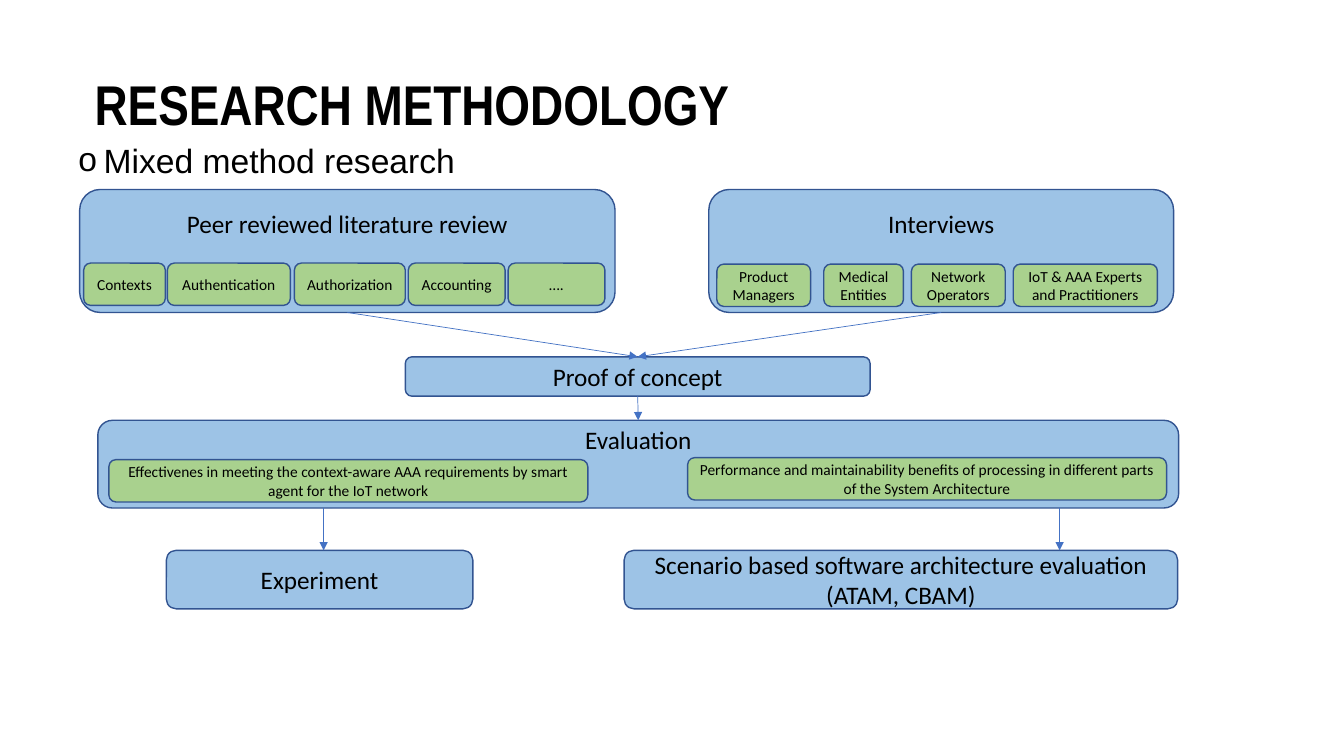
from lxml import etree
from pptx import Presentation, util as u
from pptx.dml.color import RGBColor
from pptx.enum import shapes, text
from pptx.oxml.ns import qn

PX = 9144  # 100 px to the inch
COL = {"ink": "000000", "blue": "9DC3E6", "green": "A9D18E",
       "edge": "325491", "arrow": "4472C4"}

# Left edge, width and label of the small boxes
TOPICS = [(83, 81, "Contexts"), (166, 122, "Authentication"),
          (292, 110, "Authorization"), (405, 96, "Accounting"),
          (504, 96, "….")]
PEOPLE = [(711, 93, "Product Managers"), (817, 79, "Medical Entities"),
          (904, 93, "Network Operators"),
          (1005, 143, "IoT & AAA Experts and Practitioners")]


def rgb(name):
    return RGBColor.from_string(COL[name])


def px(*nums):
    return [u.Emu(n * PX) for n in nums]


def add_run(para, words, size, font, bold=False):
    run = para.add_run()
    run.text = words
    run.font.size = u.Pt(size)
    run.font.name = font
    run.font.bold = bold
    run.font.color.rgb = rgb("ink")


def add_text(slide, area, words, size, font, bold=False, bullet=None):
    frame = slide.shapes.add_textbox(*px(*area)).text_frame
    frame.word_wrap = True
    para = frame.paragraphs[0]
    para.line_spacing = 0.9
    if bullet:
        props = para._p.get_or_add_pPr()
        props.set("marL", str(25 * PX))
        props.set("indent", str(-25 * PX))
        etree.SubElement(props, qn("a:buFont")).set("typeface", font)
        etree.SubElement(props, qn("a:buChar")).set("char", bullet)
    add_run(para, words, size, font, bold)


def add_box(slide, area, lines, fill="blue", size=18, top=None):
    """Rounded box; top is the inset of a heading, None centres the text."""
    box = slide.shapes.add_shape(
        shapes.MSO_SHAPE.ROUNDED_RECTANGLE, *px(*area))
    box.shadow.inherit = False
    box.fill.solid()
    box.fill.fore_color.rgb = rgb(fill)
    box.line.color.rgb = rgb("edge")
    box.line.width = u.Pt(1)
    frame = box.text_frame
    frame.word_wrap = True
    frame.vertical_anchor = text.MSO_ANCHOR.MIDDLE
    if top is not None:
        frame.vertical_anchor = text.MSO_ANCHOR.TOP
        frame.margin_top = u.Emu(top * PX)
    for i, words in enumerate(lines):
        para = frame.add_paragraph() if i else frame.paragraphs[0]
        para.alignment = text.PP_ALIGN.CENTER
        add_run(para, words, size, "Calibri")
    return box


def add_chips(slide, y, chips):
    for x, wide, words in chips:
        add_box(slide, (x, y, wide, 42), [words], "green", 11)


def add_arrow(slide, ends=(0, 0, 0, 0), join=None):
    """Arrow between two points, or from one box's bottom to another's top."""
    arrow = slide.shapes.add_connector(
        shapes.MSO_CONNECTOR.STRAIGHT, *px(*ends))
    if join:
        arrow.begin_connect(join[0], 2)
        arrow.end_connect(join[1], 0)
    arrow.line.color.rgb = rgb("arrow")
    arrow.line.width = u.Pt(0.5)
    line = arrow.line._get_or_add_ln()
    etree.SubElement(line, qn("a:tailEnd")).set("type", "triangle")
    etree.SubElement(arrow._element.spPr, qn("a:effectLst"))


def main():
    deck = Presentation()
    deck.slide_width, deck.slide_height = px(1333, 750)
    slide = deck.slides.add_slide(deck.slide_layouts[6])

    # Headings
    add_text(slide, (68, 138, 1042, 50), "Mixed method research", 24, "Arial",
             bullet="o")
    add_text(slide, (84, 72, 1041, 66), "RESEARCH METHODOLOGY", 40,
             "Arial Narrow", bold=True)

    # Sources of evidence
    review = add_box(slide, (79, 188, 531, 122),
                     ["Peer reviewed literature review"], top=13)
    talks = add_box(slide, (703, 188, 461, 122), ["Interviews"], top=13)
    add_chips(slide, 261, TOPICS)
    add_chips(slide, 262, PEOPLE)

    # Proof of concept and evaluation
    proof = add_box(slide, (402, 354, 461, 39), ["Proof of concept"])
    rating = add_box(slide, (97, 417, 1072, 87), ["Evaluation"], top=0)
    for pair in ((review, proof), (talks, proof), (proof, rating)):
        add_arrow(slide, join=pair)
    add_chips(slide, 456, [
        (108, 475, "Effectivenes in meeting the context-aware AAA "
                   "requirements by smart agent for the IoT network")])
    add_chips(slide, 454, [
        (682, 475, "Performance and maintainability benefits of processing "
                   "in different parts of the System Architecture")])

    # Evaluation methods
    add_box(slide, (619, 546, 549, 58),
            ["Scenario based software architecture evaluation",
             "(ATAM, CBAM)"])
    add_box(slide, (165, 546, 304, 58), ["Experiment"])
    for x in (321, 1051):
        add_arrow(slide, (x, 504, x, 546))

    deck.save("out.pptx")


if __name__ == "__main__":
    main()
